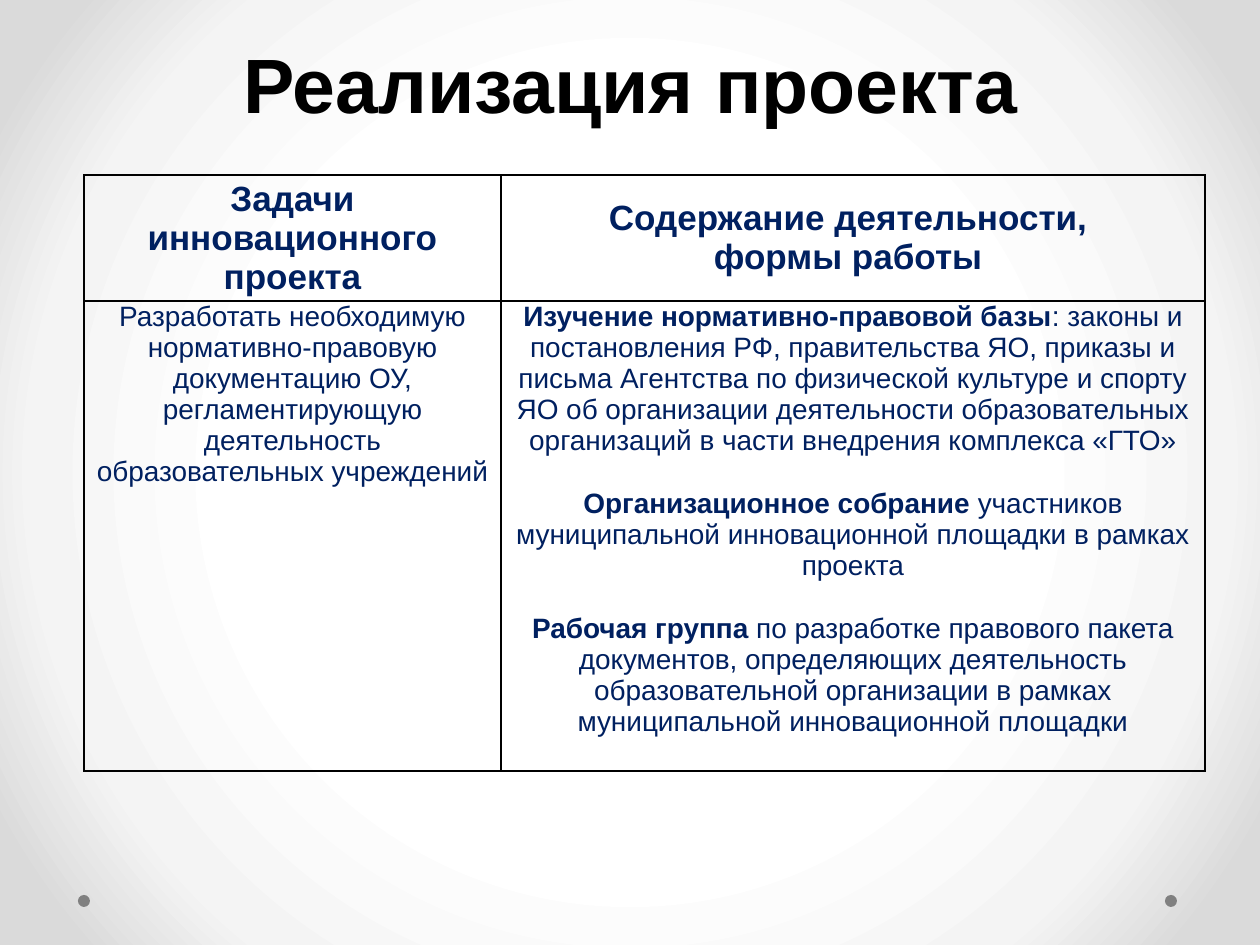
import pptx
import pptx.dml.color
import pptx.enum.shapes
import pptx.enum.text
import pptx.oxml
import pptx.oxml.ns
import pptx.util

EMU_PER_PX = 914400 / 126
FONT = "Arial"
BLACK = pptx.dml.color.RGBColor(0x00, 0x00, 0x00)
NAVY = pptx.dml.color.RGBColor(0x00, 0x20, 0x60)
GREY = pptx.dml.color.RGBColor(0x80, 0x80, 0x80)
BACKGROUND_STOPS = [
    (50, pptx.dml.color.RGBColor(0xFF, 0xFF, 0xFF)),
    (76, pptx.dml.color.RGBColor(0xF4, 0xF4, 0xF4)),
    (92, pptx.dml.color.RGBColor(0xDA, 0xDA, 0xDA)),
]
COLUMN_WIDTHS = [417, 704]
ROW_HEIGHTS = [86, 470]
TABLE_HEIGHT = 630
HEADINGS = [
    [("Задачи инновационного проекта", "")],
    [("Содержание деятельности, ", ""), ("формы работы ", "")],
]
TASKS = [
    ("", "Разработать необходимую нормативно-правовую документацию ОУ, "
         "регламентирующую деятельность образовательных учреждений"),
]
ACTIVITIES = [
    ("Изучение нормативно-правовой базы",
     ": законы и постановления РФ, правительства ЯО, приказы и письма "
     "Агентства по физической культуре и спорту ЯО об организации "
     "деятельности образовательных организаций в части внедрения "
     "комплекса «ГТО»"),
    ("Организационное собрание ",
     "участников муниципальной инновационной площадки в рамках проекта"),
    ("Рабочая группа ",
     "по разработке правового пакета документов, определяющих деятельность "
     "образовательной организации в рамках муниципальной инновационной "
     "площадки"),
]


def px(length):
    return pptx.util.Emu(round(length * EMU_PER_PX))


def set_background(slide):
    stops = "".join(
        f'<a:gs pos="{position * 1000}"><a:srgbClr val="{color}"/></a:gs>'
        for position, color in BACKGROUND_STOPS
    )
    gradient = pptx.oxml.parse_xml(
        f'<a:gradFill {pptx.oxml.ns.nsdecls("a")} rotWithShape="1">'
        f"<a:gsLst>{stops}</a:gsLst>"
        '<a:path path="circle">'
        '<a:fillToRect l="50000" t="50000" r="50000" b="50000"/>'
        "</a:path></a:gradFill>"
    )
    slide.background.fill.solid()
    solid = slide.background._cSld.find(
        ".//" + pptx.oxml.ns.qn("a:solidFill"))
    solid.getparent().replace(solid, gradient)


def add_dot(slide, left, top):
    dot = slide.shapes.add_shape(
        pptx.enum.shapes.MSO_SHAPE.OVAL, px(left), px(top), px(12), px(12))
    dot.shadow.inherit = False
    dot.fill.solid()
    dot.fill.fore_color.rgb = GREY
    dot.line.fill.background()


def style_paragraph(paragraph, size, color):
    paragraph.alignment = pptx.enum.text.PP_ALIGN.CENTER
    paragraph.font.name = FONT
    paragraph.font.size = pptx.util.Pt(size)
    paragraph.font.color.rgb = color


def add_title(slide, wording):
    frame = slide.shapes.add_textbox(
        px(64), px(25), px(1134), px(110)).text_frame
    frame.word_wrap = True
    frame.vertical_anchor = pptx.enum.text.MSO_ANCHOR.BOTTOM
    heading = frame.paragraphs[0]
    heading.text = wording
    style_paragraph(heading, 44, BLACK)
    heading.font.bold = True
    heading.line_spacing = pptx.util.Pt(58)


def add_borders(cell):
    properties = cell._tc.get_or_add_tcPr()
    for side in "LRTB":
        properties.append(pptx.oxml.parse_xml(
            f'<a:ln{side} {pptx.oxml.ns.nsdecls("a")} w="12700">'
            f'<a:solidFill><a:srgbClr val="{BLACK}"/></a:solidFill>'
            f"</a:ln{side}>"
        ))


def fill_cell(cell, entries, size, anchor, gap=0):
    add_borders(cell)
    cell.fill.background()
    cell.margin_left = cell.margin_right = px(4)
    cell.margin_top = cell.margin_bottom = 0
    cell.vertical_anchor = anchor
    frame = cell.text_frame
    for index, (lead, detail) in enumerate(entries):
        paragraph = frame.add_paragraph() if index else frame.paragraphs[0]
        style_paragraph(paragraph, size, NAVY)
        if index and gap:
            paragraph.space_before = pptx.util.Pt(gap)
        for wording, bold in ((lead, True), (detail, False)):
            if wording:
                run = paragraph.add_run()
                run.text = wording
                run.font.bold = bold


def add_plan_table(slide):
    plan = slide.shapes.add_table(
        len(ROW_HEIGHTS), len(COLUMN_WIDTHS), px(84), px(175),
        px(sum(COLUMN_WIDTHS)), px(TABLE_HEIGHT))
    table = plan.table
    table.first_row = False
    table.horz_banding = False
    for column, width in zip(table.columns, COLUMN_WIDTHS):
        column.width = px(width)
    for row, height in zip(table.rows, ROW_HEIGHTS):
        row.height = px(height)
    plan.height = px(TABLE_HEIGHT)
    for index, heading in enumerate(HEADINGS):
        fill_cell(table.cell(0, index), heading, 20,
                  pptx.enum.text.MSO_ANCHOR.MIDDLE)
    for index, entries in enumerate([TASKS, ACTIVITIES]):
        fill_cell(table.cell(1, index), entries, 16,
                  pptx.enum.text.MSO_ANCHOR.TOP, gap=18)


def main():
    presentation = pptx.Presentation()
    presentation.slide_width = px(1260)
    presentation.slide_height = px(945)
    slide = presentation.slides.add_slide(presentation.slide_layouts[6])
    set_background(slide)
    for left in (1165, 78):
        add_dot(slide, left, 895)
    add_title(slide, "Реализация проекта")
    add_plan_table(slide)
    presentation.save("out.pptx")


if __name__ == "__main__":
    main()
